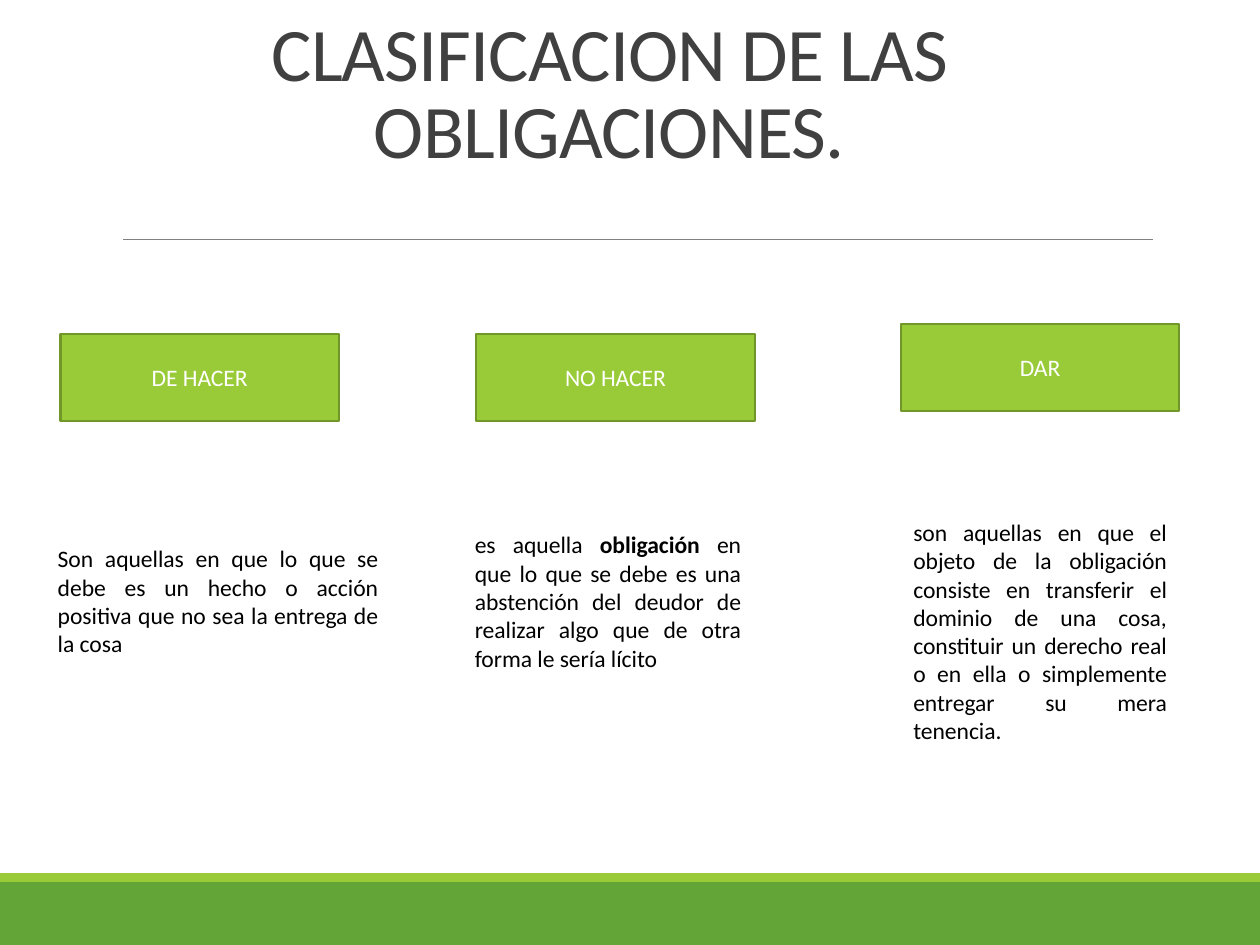
from lxml.etree import SubElement
from pptx import Presentation
from pptx.dml.color import RGBColor
from pptx.enum.shapes import MSO_CONNECTOR, MSO_SHAPE
from pptx.enum.text import MSO_ANCHOR, MSO_AUTO_SIZE, PP_ALIGN
from pptx.oxml.ns import qn
from pptx.util import Inches, Pt

GREEN = RGBColor(0x63, 0xA5, 0x37)
LIME = RGBColor(0x99, 0xCB, 0x38)
OLIVE = RGBColor(0x71, 0x96, 0x29)
GRAY = RGBColor(0x80, 0x80, 0x80)
DARK = RGBColor(0x40, 0x40, 0x40)
BLACK = RGBColor(0, 0, 0)
WHITE = RGBColor(0xFF, 0xFF, 0xFF)

TITLE = "CLASIFICACION DE LAS OBLIGACIONES."
BANDS = [((0, 7, 10, 0.5), GREEN), ((0, 6.93, 10, 0.07), LIME)]
BOX_SIZE = (2.21, 0.69)
OBLIGATIONS = [
    {
        "label": "DE HACER",
        "label_at": (0.48, 2.65),
        "definition": [("Son aquellas en que lo que se debe es un hecho o acción "
                        "positiva que no sea la entrega de la cosa", False)],
        "definition_at": (0.36, 4.27, 2.74, 1.01),
    },
    {
        "label": "NO HACER",
        "label_at": (3.78, 2.65),
        "definition": [("es aquella ", False), ("obligación", True),
                       (" en que lo que se debe es una abstención del deudor de "
                        "realizar algo que de otra forma le sería lícito", False)],
        "definition_at": (3.67, 4.16, 2.31, 1.24),
    },
    {
        "label": "DAR",
        "label_at": (7.15, 2.57),
        "definition": [("son aquellas en que el objeto de la obligación consiste en "
                        "transferir el dominio de una cosa, constituir un derecho real "
                        "o en ella o simplemente entregar su mera tenencia.", False)],
        "definition_at": (7.15, 4.06, 2.21, 1.92),
    },
]


def write_text(shape, runs, size=13.5, color=BLACK, align=PP_ALIGN.CENTER,
               anchor=MSO_ANCHOR.MIDDLE, auto_size=MSO_AUTO_SIZE.NONE,
               line_spacing=None, character_spacing=None):
    frame = shape.text_frame
    frame.word_wrap = True
    frame.auto_size = auto_size
    frame.vertical_anchor = anchor
    paragraph = frame.paragraphs[0]
    paragraph.alignment = align
    paragraph.line_spacing = line_spacing
    for text, bold in runs:
        run = paragraph.add_run()
        run.text = text
        run.font.name = "Calibri"
        run.font.size = Pt(size)
        run.font.bold = bold
        run.font.color.rgb = color
        if character_spacing is not None:
            run.font._element.set("spc", str(int(character_spacing * 100)))


def add_rectangle(slide, position, fill, line=None):
    shape = slide.shapes.add_shape(MSO_SHAPE.RECTANGLE, *map(Inches, position))
    shape.shadow.inherit = False
    shape.fill.solid()
    shape.fill.fore_color.rgb = fill
    if line is None:
        shape.line.fill.background()
    else:
        shape.line.color.rgb = line
        shape.line.width = Pt(1.25)
    return shape


def add_divider(slide, left, right, top):
    divider = slide.shapes.add_connector(
        MSO_CONNECTOR.STRAIGHT, Inches(left), Inches(top), Inches(right), Inches(top))
    divider.line.color.rgb = GRAY
    divider.line.width = Pt(0.5)
    SubElement(divider._element.spPr, qn("a:effectLst"))


def main():
    presentation = Presentation()
    presentation.slide_width, presentation.slide_height = Inches(10), Inches(7.5)
    slide = presentation.slides.add_slide(presentation.slide_layouts[5])

    for position, color in BANDS:
        add_rectangle(slide, position, color)
    add_divider(slide, 0.98, 9.15, 1.9)

    title = slide.shapes.title
    title.left, title.top, title.width, title.height = map(Inches, (0.31, 0.6, 9.05, 0.83))
    write_text(title, [(TITLE, False)], size=43.2, color=DARK, anchor=MSO_ANCHOR.BOTTOM,
               line_spacing=0.85, character_spacing=-0.5)

    for obligation in OBLIGATIONS:
        box = add_rectangle(slide, obligation["label_at"] + BOX_SIZE, LIME, OLIVE)
        write_text(box, [(obligation["label"], False)], color=WHITE)
    for obligation in OBLIGATIONS:
        definition = slide.shapes.add_textbox(*map(Inches, obligation["definition_at"]))
        write_text(definition, obligation["definition"], align=PP_ALIGN.JUSTIFY,
                   anchor=MSO_ANCHOR.TOP, auto_size=MSO_AUTO_SIZE.SHAPE_TO_FIT_TEXT)

    presentation.save("out.pptx")


if __name__ == "__main__":
    main()
